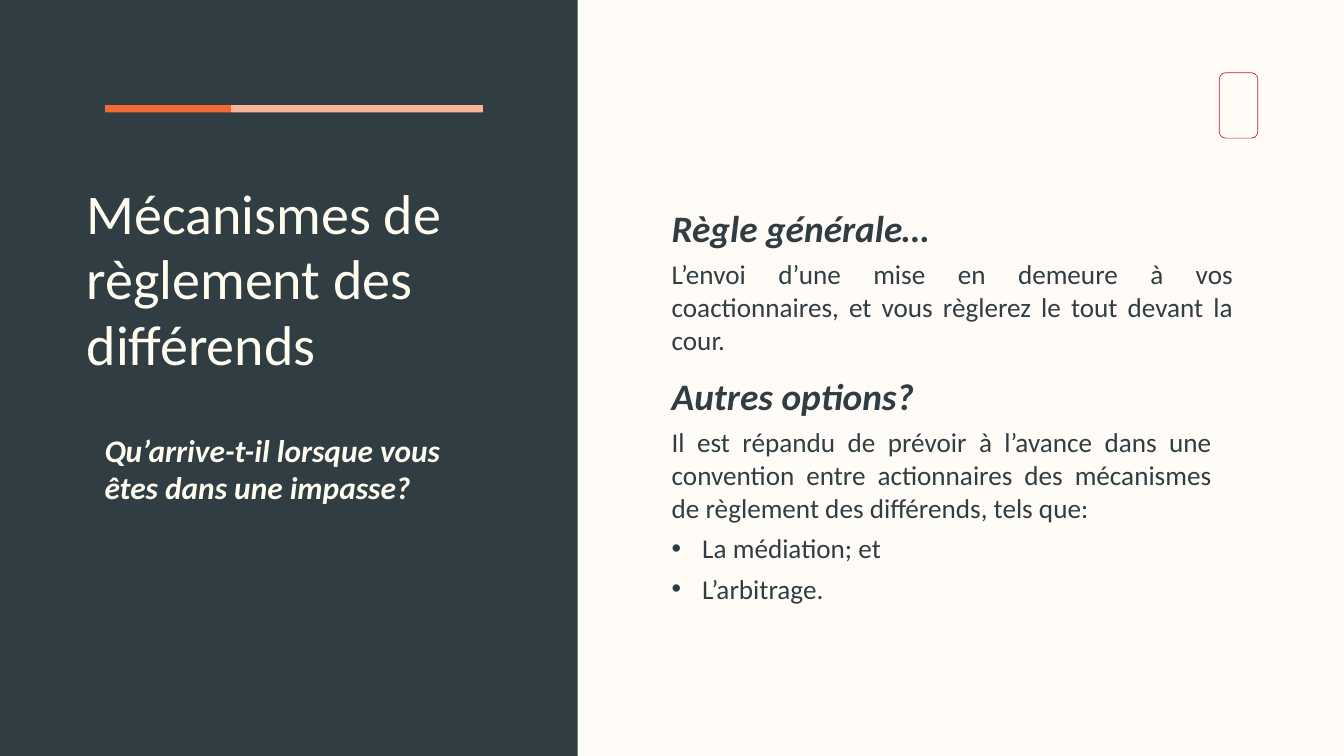
from lxml import etree
from pptx import Presentation
from pptx.dml.color import RGBColor
from pptx.enum.shapes import MSO_SHAPE as Shape
from pptx.enum.text import PP_ALIGN as Align
from pptx.oxml.ns import qn
from pptx.util import Inches, Pt

SLATE = RGBColor(0x30, 0x3D, 0x42)
CREAM = RGBColor(0xFF, 0xFC, 0xF8)
IVORY = RGBColor(0xFF, 0xFC, 0xF0)
ORANGE = RGBColor(0xF2, 0x6B, 0x36)
PEACH = RGBColor(0xF9, 0xB5, 0x9A)
RED = RGBColor(0xBA, 0x21, 0x30)
FONT = "Calibri"

# Content
SLIDE_WIDTH, SLIDE_HEIGHT = 21.99, 12.37
PANEL_WIDTH = 9.45
RULE_LEFT, RULE_TOP, RULE_HEIGHT, RULE_PART = 1.72, 1.72, 0.12, 2.06
RULE_PARTS = [(ORANGE, 1), (PEACH, 2)]

# Paragraph styles
STYLES = {
    "title": dict(size=66, color=IVORY, spacing=Pt(76.7)),
    "question": dict(size=37, color=IVORY, bold=True, italic=True),
    "heading": dict(size=44, color=SLATE, bold=True, italic=True),
    "body": dict(size=32, color=SLATE, spacing=1.01, before=8.8, align=Align.JUSTIFY),
    "bullet": dict(size=32, color=SLATE, spacing=1.01, before=8.8, bullet=True),
}

# Left, top, width, height, top inset, paragraphs
TEXTS = [
    (1.41, 2.95, 6.64, 3.25, 0.01, [
        ("title", "Mécanismes de règlement des différends")]),
    (1.7, 7.04, 6.18, 1.26, 0.01, [
        ("question", "Qu’arrive-t-il lorsque vous êtes dans une impasse?")]),
    (10.98, 3.15, 9.2, 2.69, 0.2, [
        ("heading", "Règle générale…"),
        ("body", "L’envoi d’une mise en demeure à vos coactionnaires, "
                 "et vous règlerez le tout devant la cour.")]),
    (10.98, 5.9, 8.85, 4.03, 0.2, [
        ("heading", "Autres options?"),
        ("body", "Il est répandu de prévoir à l’avance dans une convention "
                 "entre actionnaires des mécanismes de règlement des "
                 "différends, tels que:"),
        ("bullet", "La médiation; et"),
        ("bullet", "L’arbitrage.")]),
]


def add_block(slide, left, top, width, height, fill=None, line=None, kind=Shape.RECTANGLE):
    shape = slide.shapes.add_shape(
        kind, Inches(left), Inches(top), Inches(width), Inches(height))
    shape.shadow.inherit = False
    if fill is None:
        shape.fill.background()
    else:
        shape.fill.solid()
        shape.fill.fore_color.rgb = fill
    if line is None:
        shape.line.fill.background()
    else:
        shape.line.color.rgb = line
        shape.line.width = Pt(0.82)


def add_bullet(paragraph):
    properties = paragraph._p.get_or_add_pPr()
    properties.set("marL", str(Inches(0.5)))
    properties.set("indent", str(Inches(-0.5)))
    etree.SubElement(properties, qn("a:buFont"), typeface="Arial")
    etree.SubElement(properties, qn("a:buChar"), char="•")


def fill_paragraph(paragraph, text, size, color, bold=False, italic=False,
                   spacing=1.0, before=0, align=Align.LEFT, bullet=False):
    paragraph.text = text
    paragraph.alignment = align
    paragraph.line_spacing = spacing
    paragraph.space_before = Pt(before)
    if bullet:
        add_bullet(paragraph)
    for run in paragraph.runs:
        font = run.font
        font.name, font.size = FONT, Pt(size)
        font.bold, font.italic = bold, italic
        font.color.rgb = color


def add_text(slide, left, top, width, height, inset, paragraphs):
    box = slide.shapes.add_textbox(
        Inches(left), Inches(top), Inches(width), Inches(height))
    frame = box.text_frame
    frame.word_wrap = True
    frame.margin_left = Inches(0.01)
    frame.margin_right = frame.margin_bottom = 0
    frame.margin_top = Inches(inset)
    frame.text = "\n".join(text for _, text in paragraphs)
    for paragraph, (style, text) in zip(frame.paragraphs, paragraphs):
        fill_paragraph(paragraph, text, **STYLES[style])


def main():
    presentation = Presentation()
    presentation.slide_width = Inches(SLIDE_WIDTH)
    presentation.slide_height = Inches(SLIDE_HEIGHT)
    slide = presentation.slides.add_slide(presentation.slide_layouts[6])
    slide.background.fill.solid()
    slide.background.fill.fore_color.rgb = CREAM

    # Dark panel and plain emblem
    add_block(slide, 0, 0, PANEL_WIDTH, SLIDE_HEIGHT, fill=SLATE)
    add_block(slide, 19.95, 1.19, 0.63, 1.07, line=RED, kind=Shape.ROUNDED_RECTANGLE)

    # Two-tone rule above the title
    left = RULE_LEFT
    for color, parts in RULE_PARTS:
        add_block(slide, left, RULE_TOP, parts * RULE_PART, RULE_HEIGHT, fill=color)
        left += parts * RULE_PART

    # Texts
    for text in TEXTS:
        add_text(slide, *text)

    presentation.save("out.pptx")


if __name__ == "__main__":
    main()
